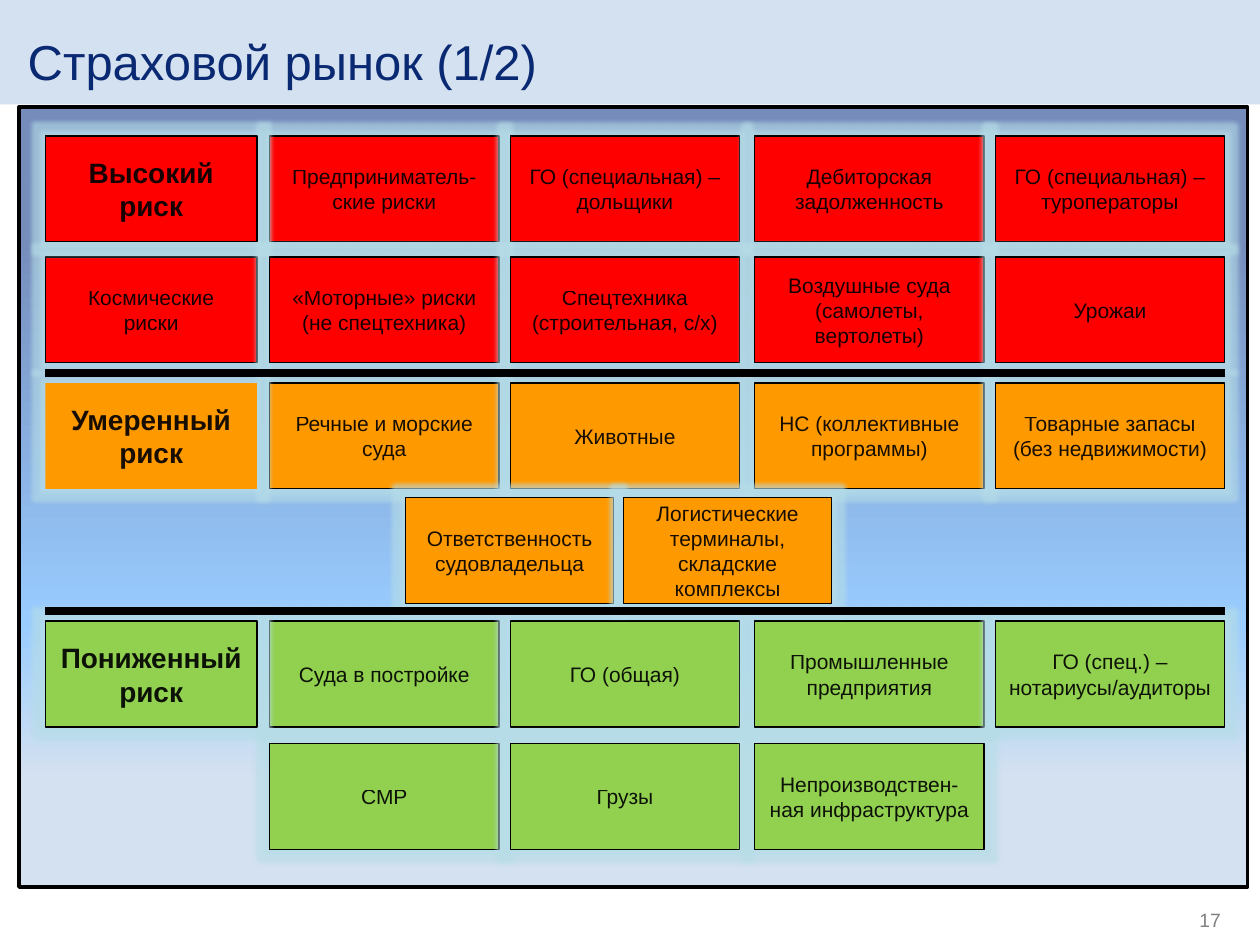
from lxml.etree import SubElement
from pptx import Presentation
from pptx.dml.color import RGBColor
from pptx.enum.shapes import MSO_CONNECTOR, MSO_SHAPE
from pptx.enum.text import MSO_ANCHOR, MSO_AUTO_SIZE, PP_ALIGN
from pptx.oxml.ns import qn
from pptx.util import Inches, Pt

BLACK = RGBColor(0x00, 0x00, 0x00)
NAVY = RGBColor(0x0A, 0x29, 0x73)
GRAY = RGBColor(0x80, 0x80, 0x80)
PALE_BLUE = RGBColor(0xD4, 0xE1, 0xF0)
SKY_BLUE = RGBColor(0x99, 0xCC, 0xFF)
SLATE_BLUE = RGBColor(0x76, 0x8D, 0xBC)
GLOW = RGBColor(0xB7, 0xDE, 0xE8)
RED = RGBColor(0xFF, 0x00, 0x00)
ORANGE = RGBColor(0xFF, 0x99, 0x00)
GREEN = RGBColor(0x92, 0xD0, 0x50)

COLUMNS = (0.36, 2.14, 4.05, 5.99, 7.9)
ROWS = (1.08, 2.04, 3.04, 3.95, 4.93, 5.9)
LABEL_WIDTH, BOX_WIDTH, MIDDLE_WIDTH, BOX_HEIGHT = 1.68, 1.82, 1.65, 0.84
MIDDLE_COLUMNS = (3.22, 4.95)
DIVIDERS = (2.96, 4.85)

LABELS = (
    (0, "Высокий риск", RED, True),
    (2, "Умеренный риск", ORANGE, False),
    (4, "Пониженный риск", GREEN, True),
)
RISKS = (
    (0, 1, RED, ("Предприниматель-ские риски", "ГО (специальная) – дольщики",
                 "Дебиторская задолженность", "ГО (специальная) – туроператоры")),
    (1, 0, RED, ("Космические риски", "«Моторные» риски\n(не спецтехника)",
                 "Спецтехника (строительная, с/х)",
                 "Воздушные суда\n(самолеты, вертолеты)", "Урожаи")),
    (2, 1, ORANGE, ("Речные и морские суда", "Животные",
                    "НС (коллективные программы)",
                    "Товарные запасы (без недвижимости)")),
    (4, 1, GREEN, ("Суда в постройке", "ГО (общая)", "Промышленные предприятия",
                   "ГО (спец.) – нотариусы/аудиторы")),
    (5, 1, GREEN, ("СМР", "Грузы", "Непроизводствен-ная инфраструктура")),
)
MIDDLE_RISKS = ("Ответственность судовладельца",
                "Логистические терминалы, складские комплексы")


class RiskSlide:
    font_name = "Arial"

    def __init__(self, presentation):
        self.slide = presentation.slides.add_slide(presentation.slide_layouts[5])
        self.shapes = self.slide.shapes

    def add_color(self, parent, color, opacity=100):
        element = SubElement(parent, qn("a:srgbClr"), val=str(color))
        if opacity < 100:
            SubElement(element, qn("a:alpha"), val=str(opacity * 1000))

    def add_run(self, paragraph, text, size, color, bold=False):
        run = paragraph.add_run()
        run.text = text
        run.font.name = self.font_name
        run.font.size = Pt(size)
        run.font.bold = bold
        run.font.color.rgb = color
        return run

    def clear_margins(self, frame):
        frame.margin_left = frame.margin_right = 0
        frame.margin_top = frame.margin_bottom = 0
        frame.vertical_anchor = MSO_ANCHOR.TOP
        frame.auto_size = MSO_AUTO_SIZE.NONE
        frame.word_wrap = True

    def rectangle(self, left, top, width, height, fill=None, line_width=0,
                  kind=MSO_SHAPE.RECTANGLE):
        shape = self.shapes.add_shape(
            kind, Inches(left), Inches(top), Inches(width), Inches(height))
        shape.shadow.inherit = False
        if fill is not None:
            shape.fill.solid()
            shape.fill.fore_color.rgb = fill
        if line_width:
            shape.line.color.rgb = BLACK
            shape.line.width = Pt(line_width)
        else:
            shape.line.fill.background()
        return shape

    def panel(self, left, top, width, height, stops):
        shape = self.rectangle(left, top, width, height, line_width=2,
                               kind=MSO_SHAPE.FLOWCHART_PROCESS)
        shape.fill.gradient()
        shape.fill.gradient_angle = 270
        stop_list = shape.element.spPr.find(".//" + qn("a:gsLst"))
        for stop in list(stop_list):
            stop_list.remove(stop)
        for position, color in stops:
            stop = SubElement(stop_list, qn("a:gs"), pos=str(position * 1000))
            self.add_color(stop, color)

    def title(self, left, top, width, height, text):
        title = self.shapes.title
        title.element.getparent().append(title.element)
        title.left, title.top = Inches(left), Inches(top)
        title.width, title.height = Inches(width), Inches(height)
        self.clear_margins(title.text_frame)
        paragraph = title.text_frame.paragraphs[0]
        paragraph.alignment = PP_ALIGN.LEFT
        self.add_run(paragraph, text, 28, NAVY)

    def box(self, left, row, width, text, fill, size=12, bold=False, outlined=True):
        shape = self.rectangle(left, ROWS[row], width, BOX_HEIGHT, fill,
                               0.75 if outlined else 0)
        effects = shape.element.spPr.find(qn("a:effectLst"))
        glow = SubElement(effects, qn("a:glow"), rad=str(Pt(5)))
        self.add_color(glow, GLOW, 60)
        frame = shape.text_frame
        frame.word_wrap = True
        frame.vertical_anchor = MSO_ANCHOR.MIDDLE
        for index, line in enumerate(text.split("\n")):
            paragraph = frame.add_paragraph() if index else frame.paragraphs[0]
            paragraph.alignment = PP_ALIGN.CENTER
            run = self.add_run(paragraph, line, size, BLACK, bold)
            color = run.font.fill._xPr.find(".//" + qn("a:srgbClr"))
            SubElement(color, qn("a:alpha"), val="91000")

    def divider(self, top):
        connector = self.shapes.add_connector(
            MSO_CONNECTOR.STRAIGHT, Inches(COLUMNS[0]), Inches(top),
            Inches(COLUMNS[-1] + BOX_WIDTH), Inches(top))
        connector.line.color.rgb = BLACK
        connector.line.width = Pt(4.75)
        SubElement(connector.element.spPr, qn("a:effectLst"))

    def page_number(self, left, top, width, height, text):
        text_box = self.shapes.add_textbox(
            Inches(left), Inches(top), Inches(width), Inches(height))
        self.clear_margins(text_box.text_frame)
        paragraph = text_box.text_frame.paragraphs[0]
        paragraph.alignment = PP_ALIGN.RIGHT
        self.add_run(paragraph, text, 11, GRAY)


def main():
    presentation = Presentation()
    presentation.slide_width, presentation.slide_height = Inches(10), Inches(7.5)
    market = RiskSlide(presentation)
    market.rectangle(0, 0, 10, 0.83, PALE_BLUE)
    market.panel(0.15, 0.85, 9.75, 6.19,
                 ((17, SLATE_BLUE), (66, SKY_BLUE), (86, PALE_BLUE)))
    market.title(0.22, 0.25, 9.17, 0.39, "Страховой рынок (1/2)")
    for row, first_column, color, names in RISKS:
        for column, name in enumerate(names, first_column):
            width = BOX_WIDTH if column else LABEL_WIDTH
            market.box(COLUMNS[column], row, width, name, color)
    for left, name in zip(MIDDLE_COLUMNS, MIDDLE_RISKS):
        market.box(left, 3, MIDDLE_WIDTH, name, ORANGE)
    for row, name, color, outlined in LABELS:
        market.box(COLUMNS[0], row, LABEL_WIDTH, name, color, 16, True, outlined)
    for top in DIVIDERS:
        market.divider(top)
    market.page_number(7.36, 7.21, 2.33, 0.31, "17")
    presentation.save("out.pptx")


if __name__ == "__main__":
    main()
